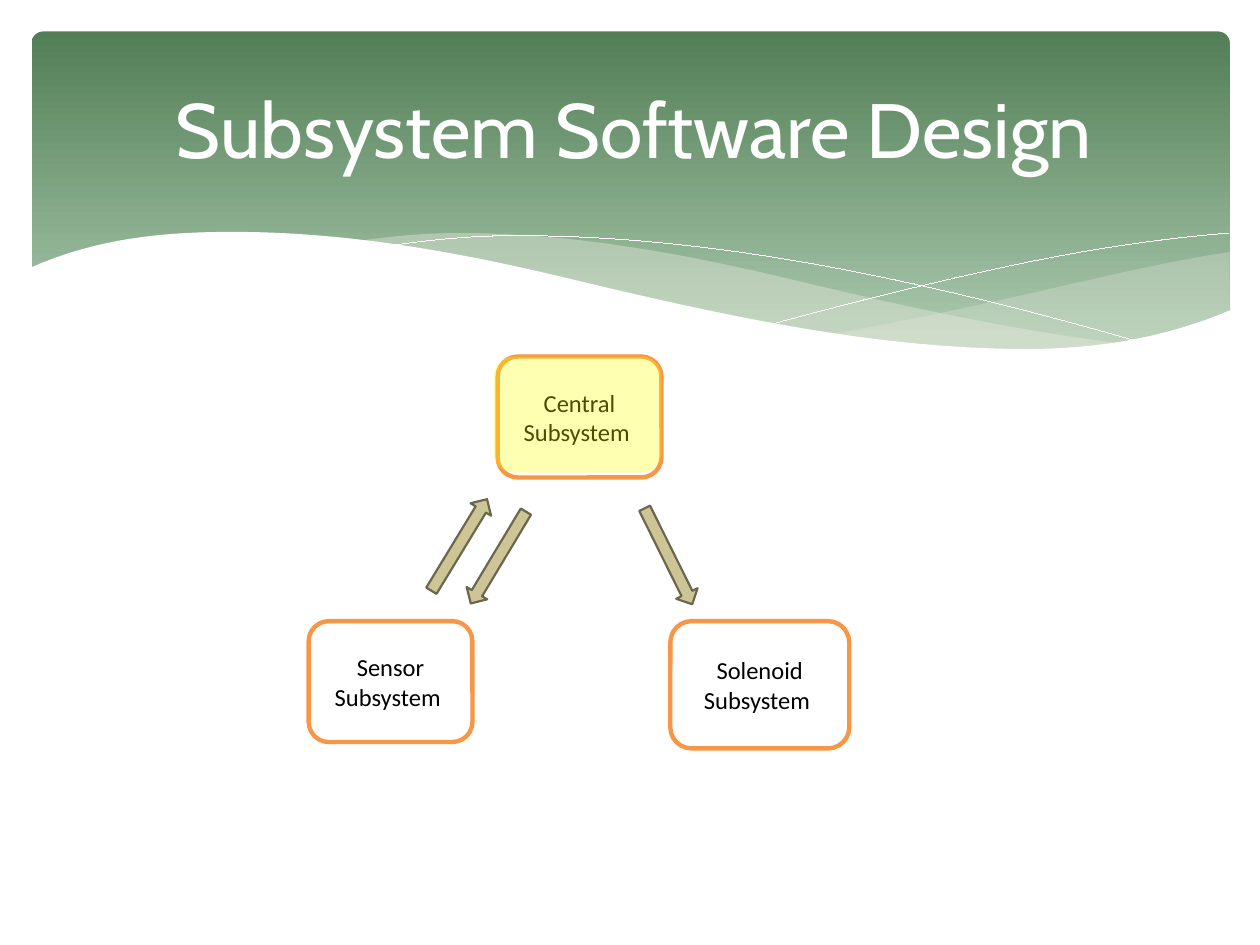
from itertools import pairwise
from lxml.etree import SubElement
from pptx import Presentation
from pptx.dml.color import RGBColor
from pptx.enum.shapes import MSO_SHAPE as Shape
from pptx.enum.text import MSO_ANCHOR as Anchor, PP_ALIGN as Align
from pptx.oxml.ns import qn
from pptx.util import Inches, Pt

COLORS = {
    "white": "FFFFFF", "black": "000000", "green": "527E56", "mint": "AAC8AD",
    "mist": "EAEBDE", "orange": "F79646", "sand": "CEC597", "olive": "6B674F",
    "yellow": "FFFF00",
}
CURVE_STEPS = 16
HAIRLINE = 0.01


def paint(shape, fill=None, line=None, width=HAIRLINE, opacity=100):
    shape.shadow.inherit = False
    if fill:
        shape.fill.solid()
        shape.fill.fore_color.rgb = RGBColor.from_string(COLORS[fill])
        if opacity < 100:
            color = shape.element.spPr.find(f"{qn('a:solidFill')}/{qn('a:srgbClr')}")
            SubElement(color, qn("a:alpha"), val=str(opacity * 1000))
    else:
        shape.fill.background()
    if line:
        shape.line.color.rgb = RGBColor.from_string(COLORS[line])
        shape.line.width = Pt(width)
    else:
        shape.line.fill.background()


def smooth_curve(knots):
    """Join (x, y, slope) knots with cubic Hermite arcs."""
    points = [knots[0][:2]]
    for (x0, y0, slope0), (x1, y1, slope1) in pairwise(knots):
        span = x1 - x0
        for step in range(1, CURVE_STEPS + 1):
            t = step / CURVE_STEPS
            ease = t * t * (3 - 2 * t)
            bend = t * (1 - t) * ((1 - t) * slope0 - t * slope1)
            points.append((x0 + span * t, y0 + (y1 - y0) * ease + span * bend))
    return [(Inches(x), Inches(y)) for x, y in points]


deck = Presentation()
deck.slide_width, deck.slide_height = Inches(10), Inches(7.5)
page = deck.slides.add_slide(deck.slide_layouts[5])
shapes = page.shapes

banner = shapes.add_shape(Shape.ROUNDED_RECTANGLE, Inches(0.25), Inches(0.25), Inches(9.51), Inches(2.7))
banner.adjustments[0] = 0.034
paint(banner)
banner.fill.gradient()
banner.fill.gradient_angle = 270
for stop, color, position in zip(banner.fill.gradient_stops, ("green", "mint"), (0, 0.9)):
    stop.color.rgb = RGBColor.from_string(COLORS[color])
    stop.position = position

right_top = [(6.61, 2.65, -0.18), (8.61, 2.23, -0.23), (9.76, 2, -0.15)]
right_bottom = [(6.61, 2.65, 0.14), (8.1, 2.78, 0), (9.76, 2.47, -0.38)]
middle_top = [(2.86, 1.91, -0.14), (3.65, 1.85, 0), (6.29, 2.22, 0.24), (8.93, 2.73, 0.12)]
middle_bottom = [(2.86, 1.91, 0.14), (4.49, 2.22, 0.24), (8.1, 2.78, 0), (8.93, 2.73, -0.11)]
falling_line = [(3.09, 1.95, -0.15), (4.1, 1.87, 0), (6.65, 2.13, 0.19), (9.07, 2.72, 0.29)]
rising_line = [(6.13, 2.57, -0.27), (8.06, 2.1, -0.21), (9.75, 1.85, -0.08)]
banner_edge = [(0.23, 2.13, -0.45), (1.85, 1.84, 0), (4.47, 2.2, 0.24), (8.15, 2.77, 0), (9.77, 2.46, -0.42)]
mask_bottom = [(0.23, 3.29, 0), (9.77, 3.29, 0)]

for top_knots, bottom_knots, color, opacity in [
    (right_top, right_bottom, "mist", 29),
    (middle_top, middle_bottom, "mist", 40),
    (banner_edge, mask_bottom, "white", 100),
]:
    start, *outline = smooth_curve(top_knots) + smooth_curve(bottom_knots)[::-1]
    builder = shapes.build_freeform(*start)
    builder.add_line_segments(outline, close=True)
    wave = builder.convert_to_shape()
    paint(wave, color, opacity=opacity)

for knots in (falling_line, rising_line):
    start, *outline = smooth_curve(knots)
    builder = shapes.build_freeform(*start)
    builder.add_line_segments(outline, close=False)
    paint(builder.convert_to_shape(), line="white")
shapes.element.append(wave.element)

title = shapes.title
title.left, title.top, title.width, title.height = Inches(0.53), Inches(0.33), Inches(9), Inches(1.37)
shapes.element.append(title.element)
labels = [(title, "Subsystem Software Design", "Cabin", 44, "white")]

for name, left, top, width, height, fill in [
    ("Sensor", 2.45, 4.93, 1.3, 0.96, "white"),
    ("Solenoid", 5.32, 4.93, 1.42, 1.01, "white"),
    ("Central", 3.95, 2.83, 1.3, 0.96, None),
]:
    box = shapes.add_shape(Shape.ROUNDED_RECTANGLE, Inches(left), Inches(top), Inches(width), Inches(height))
    paint(box, fill, "orange", 2.5)
    labels.append((box, f"{name} Subsystem ", "Calibri", 14, "black"))

for holder, text, font, size, color in labels:
    frame = holder.text_frame
    frame.word_wrap = True
    frame.vertical_anchor = Anchor.MIDDLE
    para = frame.paragraphs[0]
    para.text = text
    para.alignment = Align.CENTER
    para.font.name = font
    para.font.size = Pt(size)
    para.font.color.rgb = RGBColor.from_string(COLORS[color])

for left, top, angle in [(3.22, 4.23, 301.3), (3.53, 4.33, 121), (4.88, 4.32, 63.6)]:
    arrow = shapes.add_shape(Shape.RIGHT_ARROW, Inches(left), Inches(top), Inches(0.85), Inches(0.19))
    arrow.rotation = angle
    paint(arrow, "sand", "olive", 1.25)

highlight = shapes.add_shape(Shape.ROUNDED_RECTANGLE, Inches(3.92), Inches(2.83), Inches(1.33), Inches(0.92))
paint(highlight, "yellow", opacity=30)

deck.save("out.pptx")
